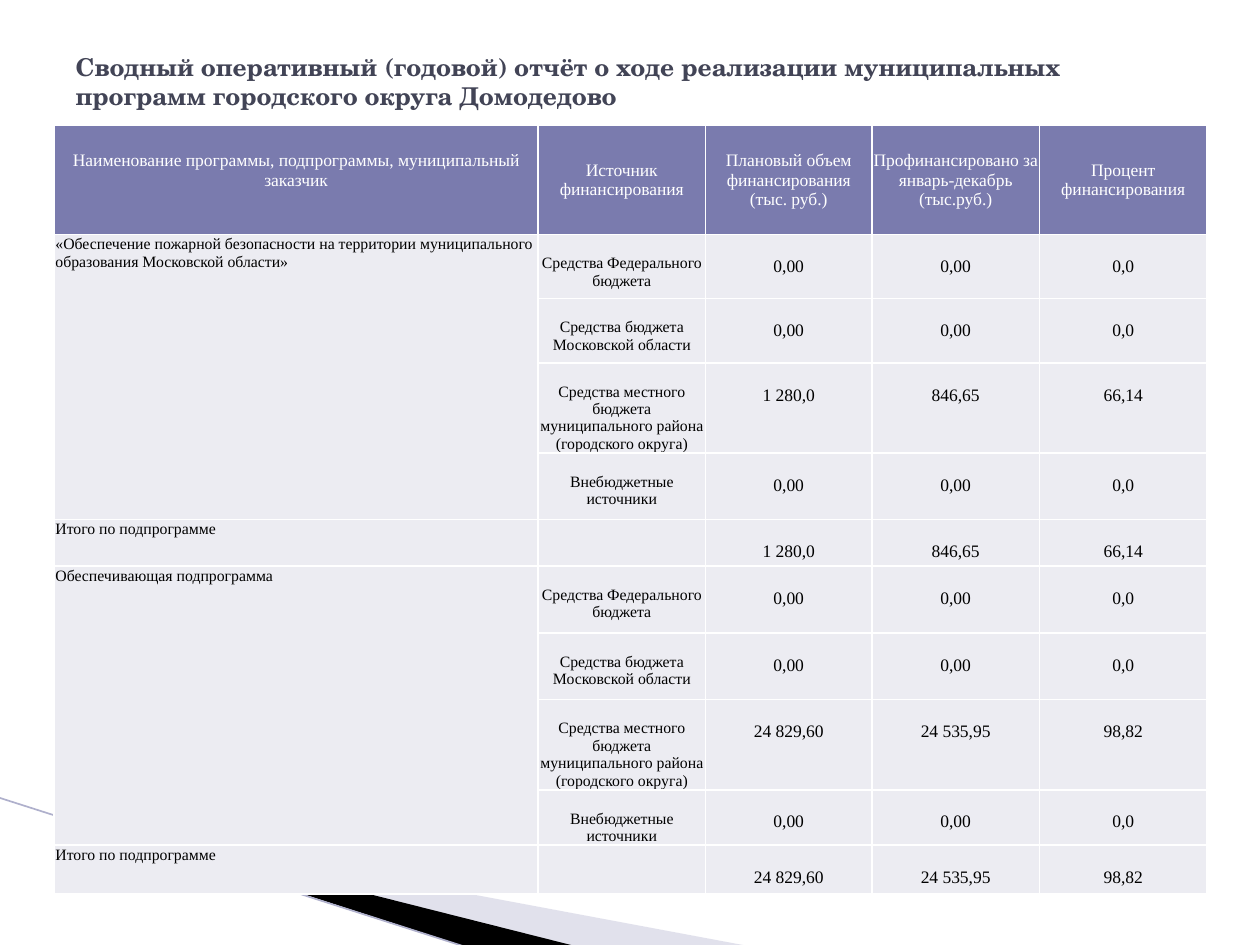
from dataclasses import dataclass

from lxml.etree import SubElement
from pptx import Presentation
from pptx.dml.color import RGBColor
from pptx.enum.shapes import MSO_CONNECTOR
from pptx.enum.text import MSO_ANCHOR, PP_ALIGN
from pptx.oxml.ns import qn
from pptx.util import Inches, Pt


@dataclass(frozen=True)
class Theme:
    """Colours, fonts and type sizes of the slide."""

    title_font: str = "TeX Gyre Schola"
    table_font: str = "Times New Roman"
    title_size: int = 14
    value_size: int = 10
    label_size: int = 9
    title: str = "424456"
    header: str = "7A7BAE"
    body: str = "ECECF2"
    white: str = "FFFFFF"
    black: str = "000000"
    pale_wedge: str = "B6B6D1"
    edge: str = "AFB0CC"


THEME = Theme()
TITLE = (
    "Сводный оперативный (годовой) отчёт о ходе реализации муниципальных "
    "программ городского округа Домодедово"
)
HEADERS = [
    "Наименование программы, подпрограммы, муниципальный заказчик",
    "Источник финансирования",
    "Плановый объем финансирования (тыс. руб.)",
    "Профинансировано за январь-декабрь (тыс.руб.)",
    "Процент финансирования",
]
SOURCES = [
    "Средства Федерального бюджета",
    "Средства бюджета Московской области",
    "Средства местного бюджета муниципального района (городского округа)",
    "Внебюджетные источники",
]
LOCAL_BUDGET = 2
NO_FUNDING = ["0,00", "0,00", "0,0"]
SUBPROGRAMMES = [
    (
        "«Обеспечение пожарной безопасности на территории "
        "муниципального образования Московской области»",
        ["1 280,0", "846,65", "66,14"],
    ),
    ("Обеспечивающая подпрограмма", ["24 829,60", "24 535,95", "98,82"]),
]
COLUMN_WIDTHS = [3.84, 1.33, 1.32, 1.33, 1.33]
ROW_HEIGHTS = [0.87, 0.51, 0.51, 0.7, 0.53, 0.37, 0.53, 0.53, 0.7, 0.42, 0.39]
CELL_MARGIN = 0.01
LABEL_DROP = 0.15
VALUE_DROP = 0.17


def style_font(paragraph, name, size, color, bold=False):
    """Format every run of a paragraph."""
    for run in paragraph.runs:
        run.font.name = name
        run.font.size = Pt(size)
        run.font.bold = bold
        run.font.color.rgb = RGBColor.from_string(color)


def add_title(slide):
    """Place and format the slide title."""
    title = slide.shapes.title
    title.left, title.top = Inches(0.5), Inches(0.3)
    title.width, title.height = Inches(9), Inches(0.69)
    title.text_frame.text = TITLE
    title.text_frame.vertical_anchor = MSO_ANCHOR.MIDDLE
    paragraph = title.text_frame.paragraphs[0]
    paragraph.alignment = PP_ALIGN.LEFT
    style_font(paragraph, THEME.title_font, THEME.title_size, THEME.title, True)


def add_wedge(slide, points, color, opacity=100):
    """Draw a filled outline through points given in inches."""
    corners = [(Inches(x), Inches(y)) for x, y in points]
    builder = slide.shapes.build_freeform(*corners[0])
    builder.add_line_segments(corners[1:])
    wedge = builder.convert_to_shape()
    wedge.shadow.inherit = False
    wedge.line.fill.background()
    wedge.fill.solid()
    wedge.fill.fore_color.rgb = RGBColor.from_string(color)
    if opacity < 100:
        srgb = wedge.fill._xPr.find(f".//{qn('a:srgbClr')}")
        SubElement(srgb, qn("a:alpha"), val=str(opacity * 1000))


def add_edge(slide, start, end):
    """Draw the thin diagonal line beside the wedges."""
    ends = [Inches(value) for value in (*start, *end)]
    edge = slide.shapes.add_connector(MSO_CONNECTOR.STRAIGHT, *ends)
    edge.line.color.rgb = RGBColor.from_string(THEME.edge)
    edge.line.width = Pt(0.95)
    SubElement(edge._element.spPr, qn("a:effectLst"))


def add_borders(cell):
    """Give a cell thin white borders on all sides."""
    properties = cell._tc.get_or_add_tcPr()
    for position, side in enumerate(("lnL", "lnR", "lnT", "lnB")):
        border = SubElement(properties, qn(f"a:{side}"), w=str(Pt(1)))
        fill = SubElement(border, qn("a:solidFill"))
        SubElement(fill, qn("a:srgbClr"), val=THEME.white)
        properties.remove(border)
        properties.insert(position, border)


def fill_cell(cell, text, size, drop=0, centered=True, color=THEME.black):
    """Write and format the text of a cell."""
    cell.margin_top = Inches(CELL_MARGIN + drop)
    cell.text_frame.text = text
    paragraph = cell.text_frame.paragraphs[0]
    paragraph.alignment = PP_ALIGN.CENTER if centered else PP_ALIGN.LEFT
    style_font(paragraph, THEME.table_font, size, color)


def prepare_cells(table):
    """Set fills, margins and borders across the table."""
    for row_number, row in enumerate(table.rows):
        for cell in row.cells:
            cell.margin_left = cell.margin_right = Inches(CELL_MARGIN)
            cell.margin_top, cell.margin_bottom = Inches(CELL_MARGIN), 0
            cell.fill.solid()
            color = THEME.body if row_number else THEME.header
            cell.fill.fore_color.rgb = RGBColor.from_string(color)
            add_borders(cell)


def fill_header(table):
    """Write the header row."""
    for column, text in enumerate(HEADERS):
        cell = table.cell(0, column)
        fill_cell(cell, text, THEME.value_size, color=THEME.white)
        cell.vertical_anchor = MSO_ANCHOR.MIDDLE
    table.cell(0, 0).margin_bottom = Inches(0.15)


def fill_values(table, row, values):
    """Write the three figures of a row."""
    for column, value in enumerate(values, start=2):
        fill_cell(table.cell(row, column), value, THEME.value_size, VALUE_DROP)


def fill_subprogramme(table, first_row, name, totals):
    """Write one subprogramme with its sources and its total row."""
    total_row = first_row + len(SOURCES)
    name_cell = table.cell(first_row, 0)
    name_cell.merge(table.cell(total_row - 1, 0))
    fill_cell(name_cell, name, THEME.label_size, centered=False)
    for index, source in enumerate(SOURCES):
        row = first_row + index
        fill_cell(table.cell(row, 1), source, THEME.label_size, LABEL_DROP)
        fill_values(table, row, totals if index == LOCAL_BUDGET else NO_FUNDING)
    fill_cell(
        table.cell(total_row, 0), "Итого по подпрограмме", THEME.label_size, centered=False
    )
    fill_values(table, total_row, totals)


def add_funding_table(slide):
    """Build the funding table."""
    frame = slide.shapes.add_table(
        len(ROW_HEIGHTS), len(COLUMN_WIDTHS), Inches(0.43), Inches(0.99),
        Inches(sum(COLUMN_WIDTHS)), Inches(sum(ROW_HEIGHTS)),
    )
    table = frame.table
    table.horz_banding = False
    for column, width in zip(table.columns, COLUMN_WIDTHS):
        column.width = Inches(width)
    for row, height in zip(table.rows, ROW_HEIGHTS):
        row.height = Inches(height)
    prepare_cells(table)
    fill_header(table)
    for index, (name, totals) in enumerate(SUBPROGRAMMES):
        fill_subprogramme(table, 1 + index * (len(SOURCES) + 1), name, totals)


def main():
    """Build and save the slide."""
    presentation = Presentation()
    presentation.slide_width, presentation.slide_height = Inches(10), Inches(7.5)
    slide = presentation.slides.add_slide(presentation.slide_layouts[5])
    add_wedge(slide, [(0.55, 6.5), (5.95, 7.51), (4.56, 7.51)], THEME.pale_wedge, 40)
    add_wedge(slide, [(0.53, 6.49), (4.57, 7.51), (3.72, 7.52)], THEME.black)
    add_edge(slide, (-0.01, 6.33), (3.71, 7.52))
    add_title(slide)
    add_funding_table(slide)
    presentation.save("out.pptx")


if __name__ == "__main__":
    main()
